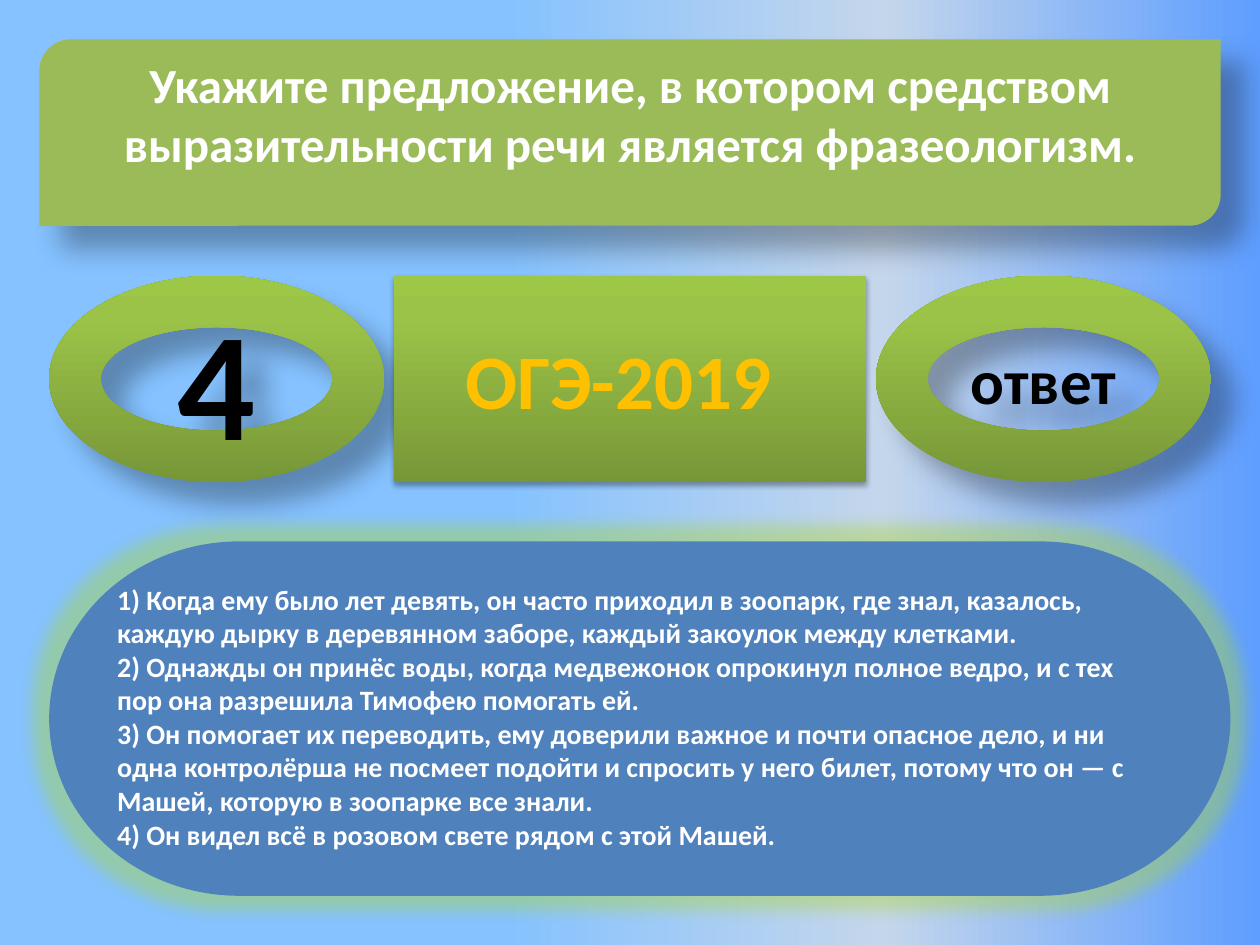
from dataclasses import dataclass
from typing import Optional

from lxml.etree import SubElement
from pptx import Presentation
from pptx.dml.color import RGBColor
from pptx.dml.fill import FillFormat
from pptx.enum.shapes import MSO_SHAPE as Preset
from pptx.enum.text import MSO_ANCHOR as Anchor, PP_ALIGN as Align
from pptx.oxml.ns import qn
from pptx.util import Pt

COLORS = {
    "green": "9BBB59", "blue": "4F81BD", "white": "FFFFFF", "black": "000000",
    "gold": "FFC000", "glow": "A9D62F",
    "green_dark": "779737", "green_mid": "9BC348", "green_light": "9DC746",
    "sky": "85C2FF", "mist": "C4D6EB", "azure": "5E9EFF", "pink": "FFEBFA",
}


@dataclass
class Stop:
    position: int
    color: str
    opacity: int = 100


@dataclass
class Effect:
    kind: str
    color: str
    opacity: int
    lengths: dict[str, float]
    angle: Optional[int] = None


@dataclass
class Panel:
    preset: Preset
    left: float
    top: float
    width: float
    height: float
    lines: list[str]
    size: int
    color: str
    effect: Effect
    fill: Optional[str] = None  # None means the green gradient
    align: Align = Align.CENTER
    bottom_inset: float = 3.6


BACKGROUND = [Stop(40, "sky"), Stop(70, "mist"), Stop(100, "azure", 65), Stop(100, "pink")]
GREEN_GRADIENT = [Stop(0, "green_dark"), Stop(80, "green_mid"), Stop(100, "green_light")]
DEEP_SHADOW = Effect("outerShdw", "black", 30, {"blurRad": 15, "dist": 18}, 45)
SOFT_SHADOW = Effect("outerShdw", "black", 35, {"blurRad": 3.1, "dist": 1.8}, 90)
GLOW = Effect("glow", "glow", 40, {"rad": 18})

ROW_TOP, ROW_HEIGHT, DONUT_WIDTH = 157.5, 118.1, 191.4
QUESTION = "Укажите предложение, в котором средством выразительности речи является фразеологизм."
OPTIONS = [
    "1) Когда ему было лет девять, он часто приходил в зоопарк, где знал, казалось, "
    "каждую дырку в деревянном заборе, каждый закоулок между клетками.",
    "2) Однажды он принёс воды, когда медвежонок опрокинул полное ведро, "
    "и с тех пор она разрешила Тимофею помогать ей.",
    "3) Он помогает их переводить, ему доверили важное и почти опасное дело, "
    "и ни одна контролёрша не посмеет подойти и спросить у него билет, "
    "потому что он — с Машей, которую в зоопарке все знали.",
    "4) Он видел всё в розовом свете рядом с этой Машей.",
]

PANELS = [
    Panel(Preset.ROUND_2_DIAG_RECTANGLE, 22.5, 22.5, 675, 106.5, [QUESTION], 28, "white",
          DEEP_SHADOW, fill="green", bottom_inset=25.6),
    Panel(Preset.DONUT, 28.1, ROW_TOP, DONUT_WIDTH, ROW_HEIGHT, ["4"], 88, "black", DEEP_SHADOW),
    Panel(Preset.DONUT, 500.6, ROW_TOP, DONUT_WIDTH, ROW_HEIGHT, ["ответ"], 36, "black",
          DEEP_SHADOW),
    Panel(Preset.FLOWCHART_TERMINATOR, 28.1, 309.4, 675, 202.5, OPTIONS, 16, "white", GLOW,
          fill="blue", align=Align.LEFT, bottom_inset=6),
    Panel(Preset.FLOWCHART_PREDEFINED_PROCESS, 225, ROW_TOP, 270, ROW_HEIGHT, ["ОГЭ-2019"], 44,
          "gold", SOFT_SHADOW, align=Align.LEFT),
]


def rgb(name: str) -> RGBColor:
    return RGBColor.from_string(COLORS[name])


def add_color(parent, name: str, opacity: int) -> None:
    color = SubElement(parent, qn("a:srgbClr"), val=COLORS[name])
    if opacity < 100:
        SubElement(color, qn("a:alpha"), val=str(opacity * 1000))


def set_gradient(fill: FillFormat, stops: list[Stop], angle: int) -> None:
    """Apply a linear gradient; the angle runs counter-clockwise."""
    fill.gradient()
    fill.gradient_angle = angle
    stop_list = fill._xPr.find(qn("a:gradFill")).find(qn("a:gsLst"))
    stop_list.clear()
    for stop in stops:
        element = SubElement(stop_list, qn("a:gs"), pos=str(stop.position * 1000))
        add_color(element, stop.color, stop.opacity)


def add_effect(shape, effect: Effect) -> None:
    shape.shadow.inherit = False
    effects = shape._element.spPr.find(qn("a:effectLst"))
    element = SubElement(effects, qn(f"a:{effect.kind}"))
    for name, length in effect.lengths.items():
        element.set(name, str(Pt(length)))
    if effect.angle is not None:
        element.set("dir", str(effect.angle * 60000))
        element.set("algn", "tl")
        element.set("rotWithShape", "0")
    add_color(element, effect.color, effect.opacity)


def add_panel(slide, panel: Panel) -> None:
    shape = slide.shapes.add_shape(panel.preset, Pt(panel.left), Pt(panel.top),
                                   Pt(panel.width), Pt(panel.height))
    if panel.fill:
        shape.fill.solid()
        shape.fill.fore_color.rgb = rgb(panel.fill)
    else:
        set_gradient(shape.fill, GREEN_GRADIENT, 90)
    shape.line.fill.background()
    add_effect(shape, panel.effect)

    frame = shape.text_frame
    frame.word_wrap = True
    frame.vertical_anchor = Anchor.MIDDLE
    frame.margin_bottom = Pt(panel.bottom_inset)
    frame.text = "\n".join(panel.lines)
    for paragraph in frame.paragraphs:
        paragraph.alignment = panel.align
        font = paragraph.font
        font.name, font.size, font.bold = "Calibri", Pt(panel.size), True
        font.color.rgb = rgb(panel.color)


def main() -> None:
    presentation = Presentation()
    presentation.slide_width, presentation.slide_height = Pt(720), Pt(540)
    slide = presentation.slides.add_slide(presentation.slide_layouts[6])
    set_gradient(slide.background.fill, BACKGROUND, 0)
    for panel in PANELS:
        add_panel(slide, panel)
    presentation.save("out.pptx")


if __name__ == "__main__":
    main()
